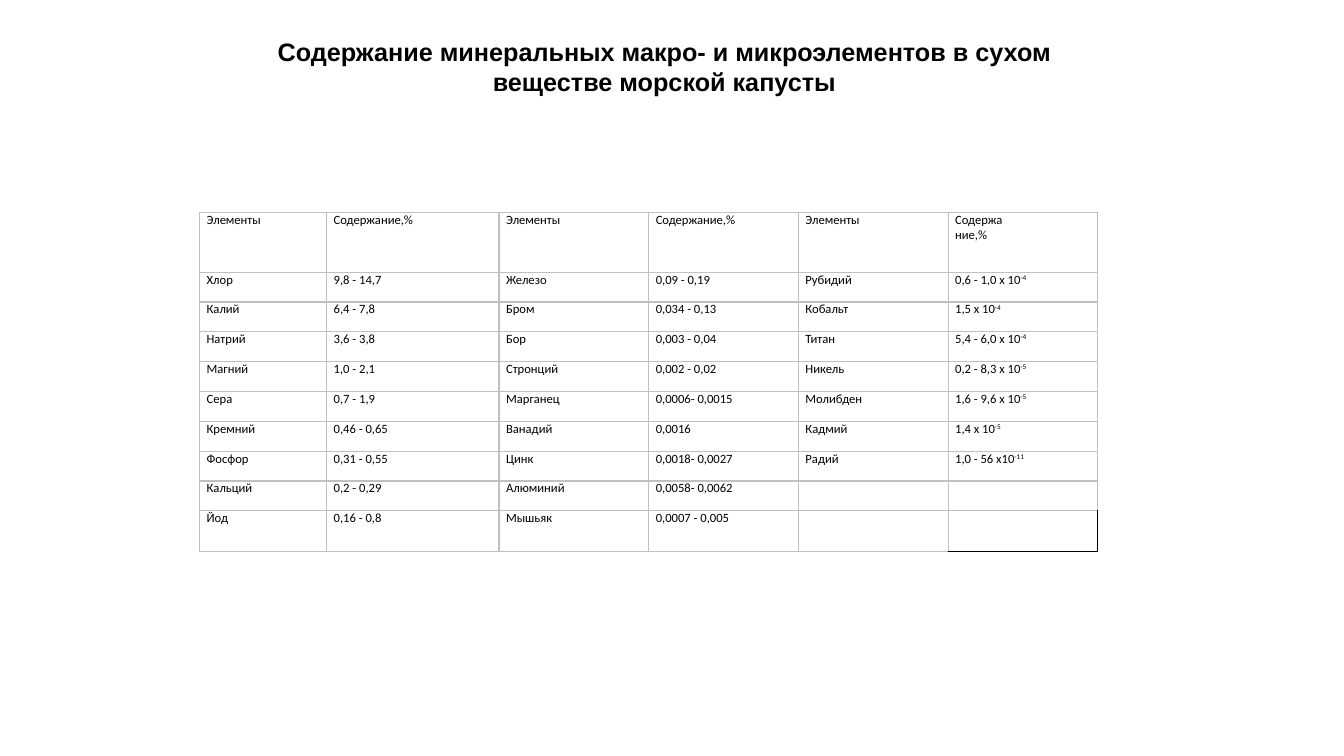
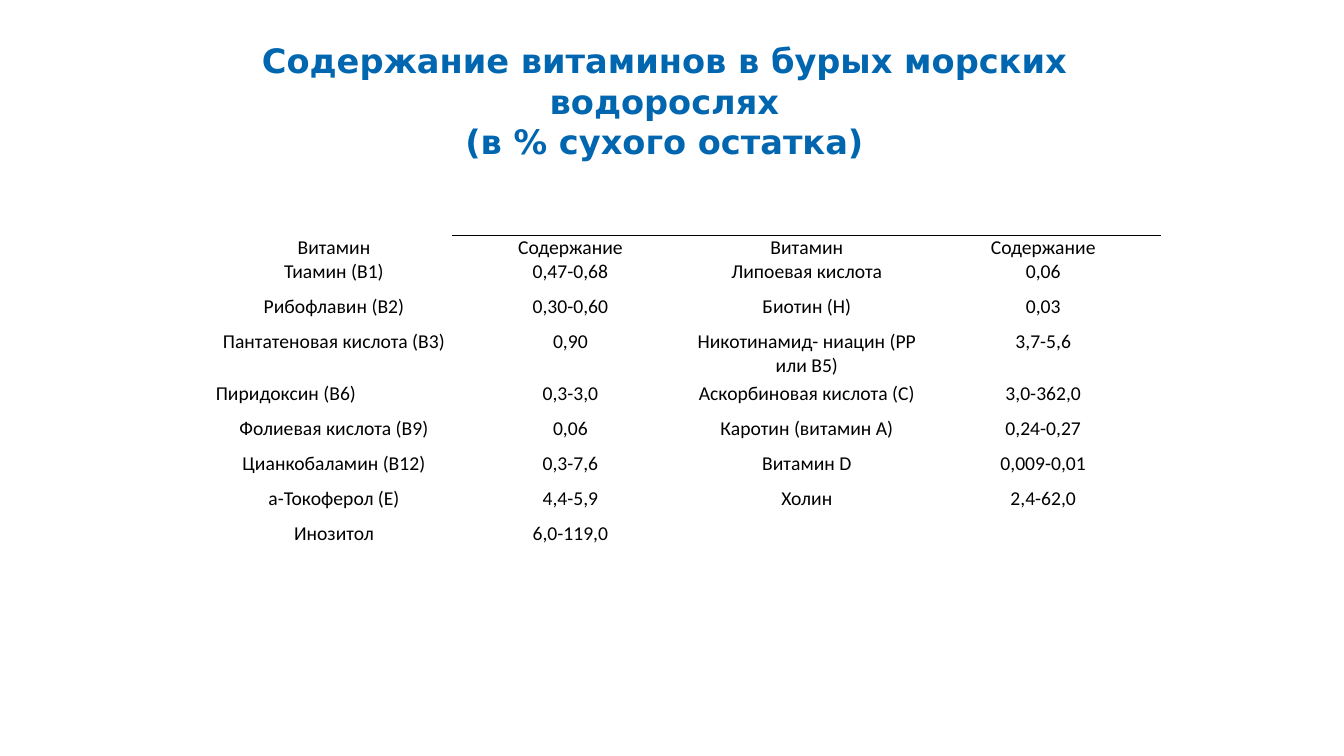
from lxml.etree import SubElement
from pptx import Presentation
from pptx.dml.color import RGBColor
from pptx.enum.text import MSO_ANCHOR, MSO_AUTO_SIZE, PP_ALIGN
from pptx.oxml.ns import qn
from pptx.util import Inches, Pt

BLACK = RGBColor(0x00, 0x00, 0x00)
WHITE = RGBColor(0xFF, 0xFF, 0xFF)
SILVER = RGBColor(0xC0, 0xC0, 0xC0)
BLUE = RGBColor(0x00, 0x66, 0xAF)
PLAIN_TABLE = "{2D5ABB26-0587-4C30-8999-92F81FD0307C}"
TITLE_ONLY = 5

MINERALS = """Элементы|Содержание,%|Элементы|Содержание,%|Элементы|Содержа/ние,%
Хлор|9,8 - 14,7|Железо|0,09 - 0,19|Рубидий|0,6 - 1,0 х 10^-4
Калий|6,4 - 7,8|Бром|0,034 - 0,13|Кобальт|1,5 х 10^-4
Натрий|3,6 - 3,8|Бор|0,003 - 0,04|Титан|5,4 - 6,0 х 10^-4
Магний|1,0 - 2,1|Стронций|0,002 - 0,02|Никель|0,2 - 8,3 х 10^-5
Сера|0,7 - 1,9|Марганец|0,0006- 0,0015|Молибден|1,6 - 9,6 х 10^-5
Кремний|0,46 - 0,65|Ванадий|0,0016|Кадмий|1,4 х 10^-5
Фосфор|0,31 - 0,55|Цинк|0,0018- 0,0027|Радий|1,0 - 56 х10^-11
Кальций|0,2 - 0,29|Алюминий|0,0058- 0,0062||
Йод|0,16 - 0,8|Мышьяк|0,0007 - 0,005||"""

VITAMINS = """Витамин|Содержание|Витамин|Содержание
Тиамин (В1)|0,47-0,68|Липоевая кислота|0,06
Рибофлавин (В2)|0,30-0,60|Биотин (Н)|0,03
Пантатеновая кислота (В3)|0,90|Никотинамид- ниацин (РР или В5)|3,7-5,6
Пиридоксин (В6)|0,3-3,0|Аскорбиновая кислота (С)|3,0-362,0
Фолиевая кислота (В9)|0,06|Каротин (витамин А)|0,24-0,27
Цианкобаламин (В12)|0,3-7,6|Витамин D|0,009-0,01
a-Токоферол (Е)|4,4-5,9|Холин|2,4-62,0
Инозитол|6,0-119,0||"""


def write(frame, text, *, size, font="Calibri", color=BLACK, bold=False,
          align=PP_ALIGN.LEFT):
    for number, line in enumerate(text.split("/")):
        para = frame.add_paragraph() if number else frame.paragraphs[0]
        para.alignment = align
        for level, part in enumerate(line.split("^")):
            for index, piece in enumerate(part.split("\n")):
                if index:
                    para.add_line_break()
                if not piece:
                    continue
                span = para.add_run()
                span.text = piece
                span.font.size = Pt(size)
                span.font.name = font
                span.font.bold = bold
                span.font.color.rgb = color
                if level:
                    span._r.get_or_add_rPr().set("baseline", "30000")
        SubElement(para._p, qn("a:endParaRPr"), sz=str(size * 100))


def share(total, sizes):
    rest = (total - sum(filter(None, sizes))) / sizes.count(None)
    return [Inches(rest if size is None else size) for size in sizes]


def draw_border(cell, side, color):
    line = SubElement(cell._tc.get_or_add_tcPr(), qn(f"a:ln{side}"), w=str(Pt(1)))
    fill = SubElement(line, qn("a:solidFill"))
    SubElement(fill, qn("a:srgbClr"), val=str(color))


class Deck:
    def __init__(self):
        self.deck = Presentation()
        self.deck.slide_width = Inches(13.33)
        self.deck.slide_height = Inches(7.5)
        self.page = None

    def add_page(self):
        self.page = self.deck.slides.add_slide(self.deck.slide_layouts[TITLE_ONLY])

    def title(self, text, place, **style):
        box = self.page.shapes.title
        box.left, box.top, box.width, box.height = map(Inches, place)
        frame = box.text_frame
        frame.word_wrap = True
        frame.auto_size = MSO_AUTO_SIZE.NONE
        frame.vertical_anchor = MSO_ANCHOR.TOP
        write(frame, text, bold=True, align=PP_ALIGN.CENTER, **style)

    def table(self, content, place, columns, rows, *, size, inset=0, grid=None,
              black_edges, align=PP_ALIGN.LEFT, left_cells=()):
        shape = self.page.shapes.add_table(len(rows), len(columns), *map(Inches, place))
        table = shape.table
        table.first_row = table.horz_banding = False
        table._tbl.tblPr.find(qn("a:tableStyleId")).text = PLAIN_TABLE
        for column, width in zip(table.columns, share(place[2], columns)):
            column.width = width
        for row, height in zip(table.rows, share(place[3], rows)):
            row.height = height
        for top, line in enumerate(content.splitlines()):
            for left, text in enumerate(line.split("|")):
                spot = (top, left)
                cell = table.cell(*spot)
                cell.margin_left = cell.margin_right = Inches(inset)
                cell.margin_top = cell.margin_bottom = 0
                for side in "LRTB":
                    color = BLACK if side in black_edges.get(spot, "") else grid
                    if color is not None:
                        draw_border(cell, side, color)
                cell.fill.solid()
                cell.fill.fore_color.rgb = WHITE
                write(cell.text_frame, text, size=size,
                      align=PP_ALIGN.LEFT if spot in left_cells else align)


def main():
    show = Deck()

    show.add_page()
    show.title("Содержание минеральных макро- и микроэлементов в сухом "
               "веществе морской капусты",
               (2.53, 0.31, 8.12, 0.71), size=18, font="Arial")
    show.table(MINERALS, (1.98, 2.11, 8.91, 3.36),
               [1.26, 1.71] + [None] * 4, [0.59] + [None] * 8 + [0.4],
               size=9, inset=0.07, grid=SILVER, black_edges={(9, 5): "RB"})

    show.add_page()
    show.title("Содержание витаминов в бурых морских водорослях\n(в % сухого остатка)",
               (1.98, 0.35, 9.22, 1.3), size=24, font="DejaVu Sans", color=BLUE)
    show.table(VITAMINS, (2.14, 2.34, 9.38, 3.3),
               [None] * 4, [0.23, None, None, 0.52] + [None] * 4 + [0.47],
               size=14, align=PP_ALIGN.CENTER, left_cells={(4, 0)},
               black_edges={(0, column): "T" for column in (1, 2, 3)})

    show.deck.save("out.pptx")


if __name__ == "__main__":
    main()
